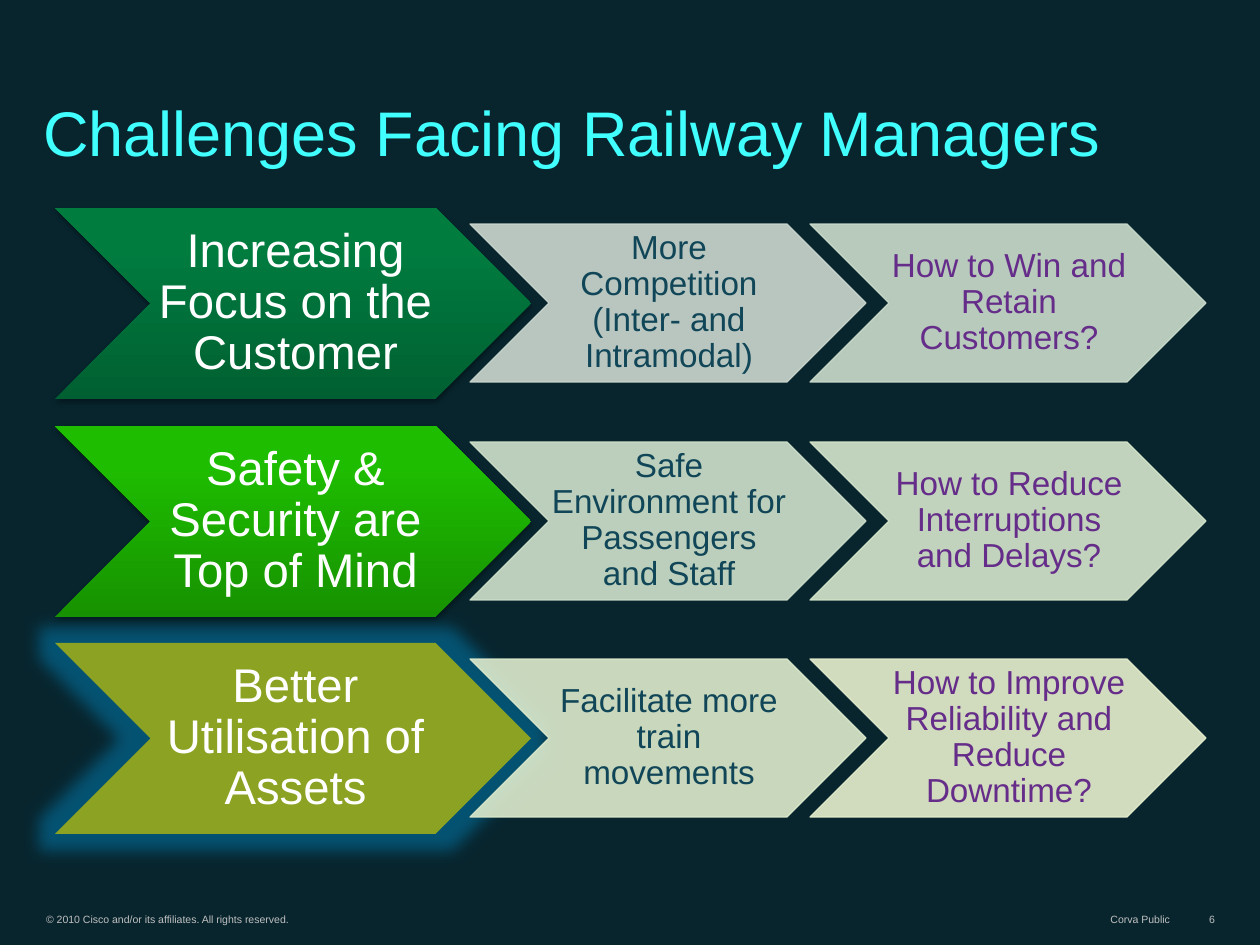
from dataclasses import dataclass

from lxml import etree
from pptx import Presentation
from pptx import util as u
from pptx.dml.color import RGBColor
from pptx.enum import shapes, text
from pptx.oxml.ns import qn


@dataclass(frozen=True)
class Theme:
    font: str = "Arial"
    background: str = "08252E"
    title: str = "40FFFE"
    challenge: str = "FFFFFF"
    cause: str = "104657"
    question: str = "652D89"
    footer: str = "C0C0C0"
    shadow: str = "000000"
    glow: str = "0096D6"
    title_size: int = 36
    challenge_size: int = 27
    detail_size: int = 19
    footer_size: int = 6


THEME = Theme()

# Each row: challenge, its fill (dark and light, or one flat colour),
# then the cause and the question, each with its fill.
ROWS = [
    ("Increasing Focus on the Customer", ("006031", "007C3F"),
     "More Competition (Inter- and Intramodal)", "CCD8CF",
     "How to Win and Retain Customers?", "CCDDCC"),
    ("Safety & Security are Top of Mind", ("179200", "1EBD00"),
     "Safe Environment for Passengers and Staff", "D0E2CC",
     "How to Reduce Interruptions and Delays?", "D6E7CC"),
    ("Better Utilisation of Assets", ("8BA223",),
     "Facilitate more train movements", "DEEBCD",
     "How to Improve Reliability and Reduce Downtime?", "E7EFCE"),
]
FIRST_TOP, LAST_TOP = 208, 643
CHALLENGE_LEFT, CHALLENGE_WIDTH, CHALLENGE_HEIGHT = 55, 476, 191
CAUSE_LEFT, QUESTION_LEFT, DETAIL_WIDTH, DETAIL_HEIGHT = 470, 810, 396, 158


def px(length):
    return u.Inches(length / 126)


def rgb(colour):
    return RGBColor.from_string(colour)


def write(frame, words, size, colour, insets, anchor, align, spacing=1.0, wrap=True):
    frame.auto_size = text.MSO_AUTO_SIZE.NONE
    frame.word_wrap = wrap
    frame.vertical_anchor = anchor
    (frame.margin_left, frame.margin_top,
     frame.margin_right, frame.margin_bottom) = map(px, insets)
    frame.text = words
    paragraph = frame.paragraphs[0]
    paragraph.alignment = align
    paragraph.line_spacing = spacing
    paragraph.font.name = THEME.font
    paragraph.font.size = u.Pt(size)
    paragraph.font.color.rgb = rgb(colour)


def add_alpha(colour_node, percent):
    etree.SubElement(colour_node, qn("a:alpha"), val=str(percent * 1000))


def add_effect(shape, kind, colour, percent, **settings):
    effects = shape.element.spPr.find(qn("a:effectLst"))
    effect = etree.SubElement(effects, qn(kind),
                              {name: str(value) for name, value in settings.items()})
    add_alpha(etree.SubElement(effect, qn("a:srgbClr"), val=colour), percent)


def add_chevron(slide, box, words, size, colour, left_inset):
    chevron = slide.shapes.add_shape(shapes.MSO_SHAPE.CHEVRON, *map(px, box))
    chevron.shadow.inherit = False
    write(chevron.text_frame, words, size, colour, (left_inset, 2, 0, 2),
          text.MSO_ANCHOR.MIDDLE, text.PP_ALIGN.CENTER, 0.9)
    return chevron


def add_challenge(slide, top, words, colours):
    """Add a large chevron: shaded with a shadow, or flat with a glow."""
    chevron = add_chevron(slide, (CHALLENGE_LEFT, top, CHALLENGE_WIDTH, CHALLENGE_HEIGHT),
                          words, THEME.challenge_size, THEME.challenge, 5)
    chevron.line.fill.background()
    if len(colours) == 1:
        chevron.fill.solid()
        chevron.fill.fore_color.rgb = rgb(colours[0])
        add_effect(chevron, "a:glow", THEME.glow, 40, rad=u.Pt(18))
        return
    chevron.fill.gradient()
    chevron.fill.gradient_angle = 90
    for stop, colour, position in zip(chevron.fill.gradient_stops, colours, (0, 0.8)):
        stop.color.rgb = rgb(colour)
        stop.position = position
    add_effect(chevron, "a:outerShdw", THEME.shadow, 35, blurRad=u.Pt(3.1),
               dist=u.Pt(1.8), dir=90 * 60000, rotWithShape=0)


def add_detail(slide, left, row_top, words, fill, colour):
    """Add a small translucent chevron, centred on its row."""
    top = row_top + (CHALLENGE_HEIGHT - DETAIL_HEIGHT) // 2
    chevron = add_chevron(slide, (left, top, DETAIL_WIDTH, DETAIL_HEIGHT),
                          words, THEME.detail_size, colour, 2)
    chevron.fill.solid()
    chevron.fill.fore_color.rgb = rgb(fill)
    chevron.line.color.rgb = rgb(fill)
    chevron.line.width = u.Pt(0.75)
    for colour_node in chevron.element.spPr.iter(qn("a:srgbClr")):
        add_alpha(colour_node, 90)


def add_footer(slide, left, width, words, align, wrap=False):
    box = slide.shapes.add_textbox(*map(px, (left, 907, width, 24)))
    write(box.text_frame, words, THEME.footer_size, THEME.footer, (11, 5, 11, 5),
          text.MSO_ANCHOR.BOTTOM, align, wrap=wrap)


def set_title(slide, words):
    title = slide.shapes.title
    title.left, title.top, title.width, title.height = map(px, (32, 59, 1183, 116))
    write(title.text_frame, words, THEME.title_size, THEME.title, (11, 6, 11, 6),
          text.MSO_ANCHOR.BOTTOM, text.PP_ALIGN.LEFT, 0.8)


def main():
    deck = Presentation()
    deck.slide_width, deck.slide_height = px(1260), px(945)
    slide = deck.slides.add_slide(deck.slide_layouts[5])
    slide.background.fill.solid()
    slide.background.fill.fore_color.rgb = rgb(THEME.background)

    set_title(slide, "Challenges Facing Railway Managers")
    add_footer(slide, 35, 471, "© 2010 Cisco and/or its affiliates. All rights reserved.",
               text.PP_ALIGN.LEFT, wrap=True)
    add_footer(slide, 1100, 81, "Corva Public", text.PP_ALIGN.RIGHT)
    add_footer(slide, 1191, 35, "6", text.PP_ALIGN.RIGHT)

    pitch = (LAST_TOP - FIRST_TOP) / (len(ROWS) - 1)
    for row, (challenge, colours, cause, cause_fill, question, question_fill) in enumerate(ROWS):
        top = round(FIRST_TOP + row * pitch)
        add_challenge(slide, top, challenge, colours)
        add_detail(slide, CAUSE_LEFT, top, cause, cause_fill, THEME.cause)
        add_detail(slide, QUESTION_LEFT, top, question, question_fill, THEME.question)

    deck.save("out.pptx")


if __name__ == "__main__":
    main()
